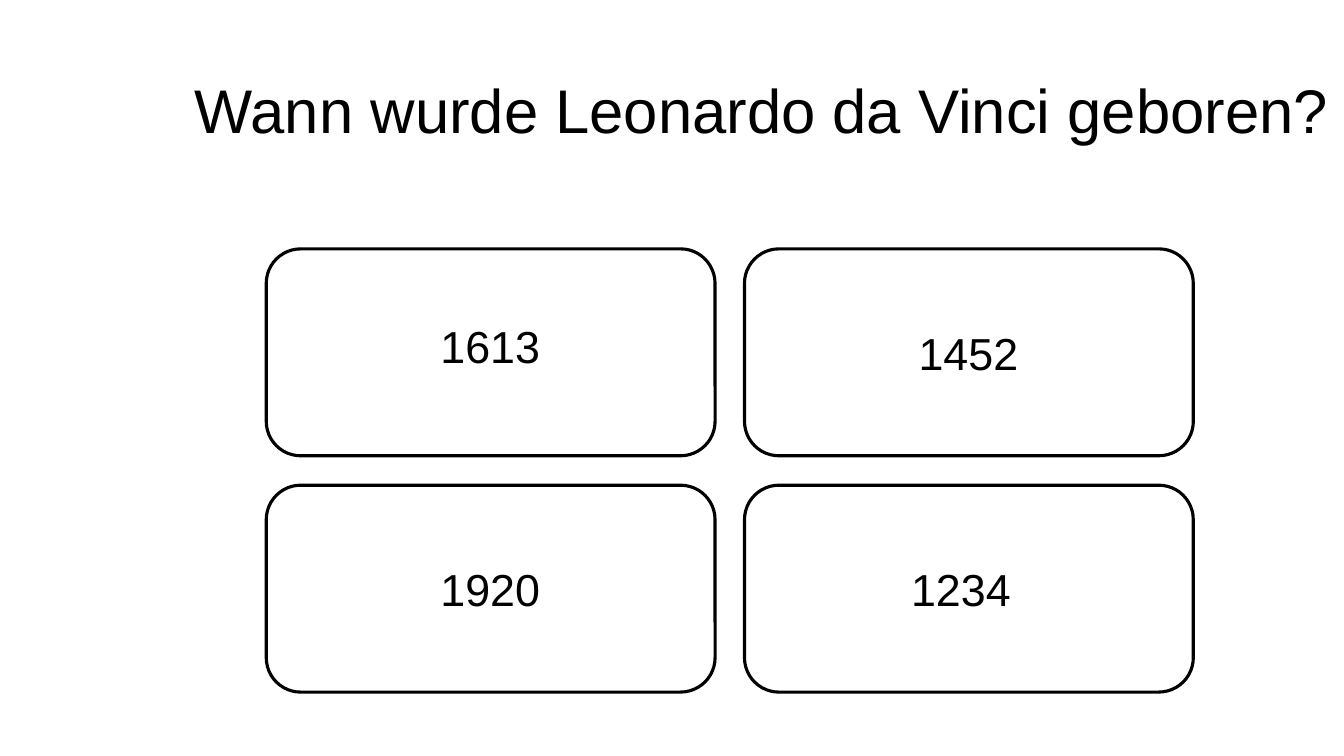
import dataclasses

import pptx
import pptx.dml.color
import pptx.enum.shapes
import pptx.enum.text
import pptx.util

Pt = pptx.util.Pt
Align = pptx.enum.text.PP_ALIGN
Anchor = pptx.enum.text.MSO_ANCHOR
Fit = pptx.enum.text.MSO_AUTO_SIZE


@dataclasses.dataclass(frozen=True)
class Theme:
    ink: str = "000000"
    paper: str = "FFFFFF"
    font: str = "Arial"
    head: float = 44
    body: float = 32
    line: float = 2.25


def write(frame, text, *, theme, size, align, anchor, fit, spacing=1.0):
    frame.word_wrap = True
    frame.auto_size = fit
    frame.vertical_anchor = anchor
    para = frame.paragraphs[0]
    para.alignment = align
    para.line_spacing = spacing
    run = para.add_run()
    run.text = text
    run.font.name = theme.font
    run.font.size = Pt(size)
    run.font.color.rgb = pptx.dml.color.RGBColor.from_string(theme.ink)


class Quiz:
    def __init__(self, slide, theme):
        self.slide = slide
        self.theme = theme
        fill = slide.background.fill
        fill.solid()
        fill.fore_color.rgb = pptx.dml.color.RGBColor.from_string(theme.paper)

    def title(self, text, left, top, width, height):
        box = self.slide.shapes.title
        box.left, box.top = Pt(left), Pt(top)
        box.width, box.height = Pt(width), Pt(height)
        write(box.text_frame, text, theme=self.theme, size=self.theme.head,
              align=Align.LEFT, anchor=Anchor.MIDDLE, fit=Fit.NONE,
              spacing=0.9)

    def card(self, left, top, width, height):
        kind = pptx.enum.shapes.MSO_SHAPE.ROUNDED_RECTANGLE
        card = self.slide.shapes.add_shape(
            kind, Pt(left), Pt(top), Pt(width), Pt(height))
        card.shadow.inherit = False
        card.fill.background()
        card.line.width = Pt(self.theme.line)
        card.line.color.rgb = pptx.dml.color.RGBColor.from_string(
            self.theme.ink)

    def label(self, text, left, top, width, height):
        box = self.slide.shapes.add_textbox(
            Pt(left), Pt(top), Pt(width), Pt(height))
        write(box.text_frame, text, theme=self.theme, size=self.theme.body,
              align=Align.CENTER, anchor=Anchor.TOP,
              fit=Fit.SHAPE_TO_FIT_TEXT)


def main():
    deck = pptx.Presentation()
    deck.slide_width, deck.slide_height = Pt(960), Pt(540)
    slide = deck.slides.add_slide(deck.slide_layouts.get_by_name("Title Only"))
    quiz = Quiz(slide, Theme())
    quiz.title("Wann wurde Leonardo da Vinci geboren?", 132, 28.8, 828, 104.4)

    left, top, width, height, gap = 190.2, 177.8, 320.6, 147.8, 21
    # Each answer with the offset of its label inside the card
    answers = [("1613", 20, 46), ("1452", 20, 51),
               ("1920", 20, 51), ("1234", 14.6, 51)]
    for index, (year, dx, dy) in enumerate(answers):
        row, col = divmod(index, 2)
        x = left + col * (width + gap)
        y = top + row * (height + gap)
        quiz.card(x, y, width, height)
        quiz.label(year, x + dx, y + dy, 280, 46)

    deck.save("out.pptx")


if __name__ == "__main__":
    main()
